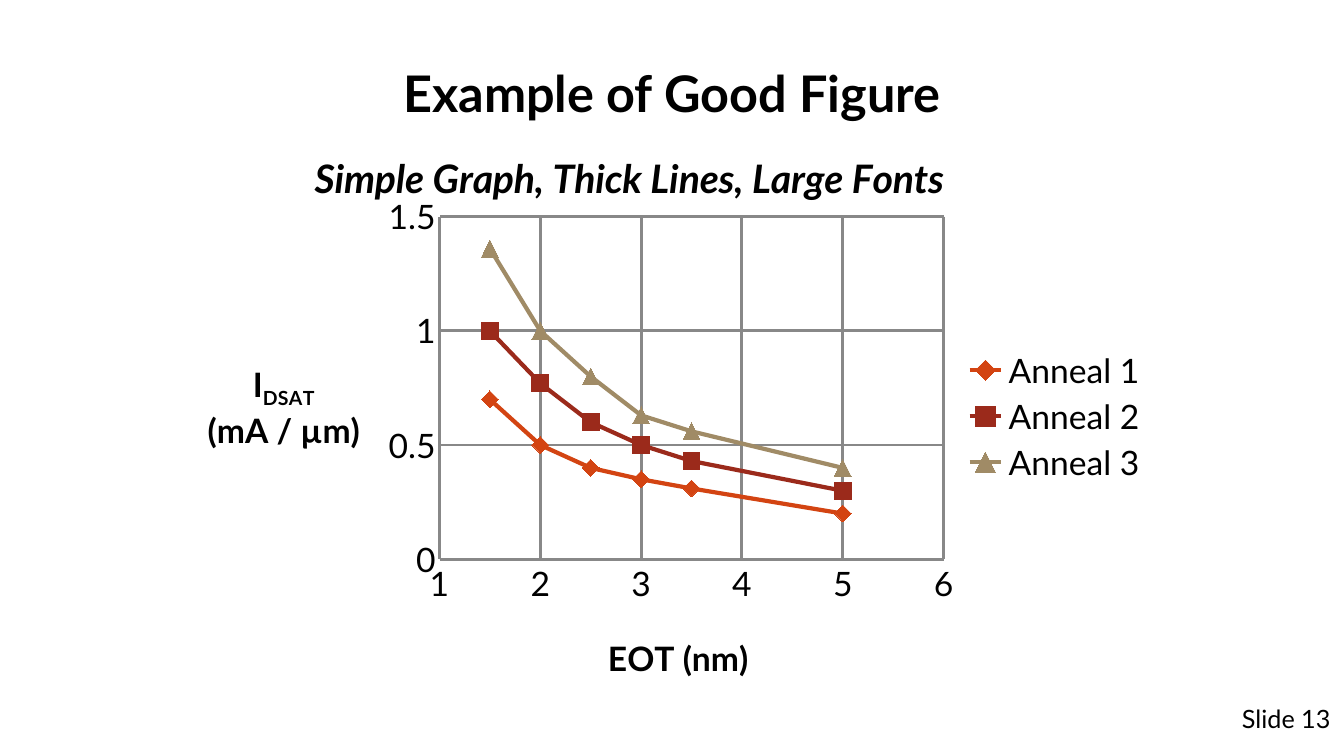
import dataclasses

import lxml.etree
import pptx
import pptx.chart.data
import pptx.dml.color
import pptx.enum.chart
import pptx.enum.text
import pptx.oxml.ns
import pptx.util

PX = 9144  # EMU: 100 px to the inch


@dataclasses.dataclass(frozen=True)
class Theme:
    font: str = "Lato"
    ink: str = "000000"
    paper: str = "FFFFFF"
    grid: str = "888888"
    series: tuple = ("D34412", "9B2A1B", "A08B66")
    title: int = 36
    chart_title: int = 28
    label: int = 24
    footer: int = 18
    grid_width: int = 2
    curve_width: int = 3
    marker_size: int = 12


THEME = Theme()
MARKER = pptx.enum.chart.XL_MARKER_STYLE
CENTER = pptx.enum.text.PP_ALIGN.CENTER

EOT = (1.5, 2, 2.5, 3, 3.5, 5)
ANNEALS = {
    "Anneal 1": (MARKER.DIAMOND, (0.7, 0.5, 0.4, 0.35, 0.31, 0.2)),
    "Anneal 2": (MARKER.SQUARE, (1, 0.77, 0.6, 0.5, 0.43, 0.3)),
    "Anneal 3": (MARKER.TRIANGLE, (1.36, 1, 0.8, 0.63, 0.56, 0.4)),
}


def rgb(color):
    return pptx.dml.color.RGBColor.from_string(color)


def emu(box):
    return [length * PX for length in box]


def style(font, size, bold=False, italic=False):
    font.name, font.size = THEME.font, pptx.util.Pt(size)
    font.bold, font.italic = bold, italic
    font.color.rgb = rgb(THEME.ink)


def write(para, text, align=None, **look):
    span = para.add_run()
    span.text = text
    style(span.font, **look)
    if align is not None:
        para.alignment = align


def stroke(line, color, width):
    line.color.rgb = rgb(color)
    line.width = pptx.util.Pt(width)


def place(part, box, area, inner=False):
    """Fix a chart part at a px box inside the chart area."""
    tag = pptx.oxml.ns.qn
    for old in part.findall(tag("c:layout")):
        part.remove(old)
    layout = lxml.etree.Element(tag("c:layout"))
    manual = lxml.etree.SubElement(layout, tag("c:manualLayout"))
    fields = [("layoutTarget", "inner")] if inner else []
    fields += [("xMode", "edge"), ("yMode", "edge")]
    spans = (area[2], area[3]) * 2
    fields += [(name, f"{length / span:.4f}") for name, length, span in zip("xywh", box, spans)]
    for name, value in fields:
        lxml.etree.SubElement(manual, tag("c:" + name)).set("val", value)
    leading = (tag("c:tx"), tag("c:legendPos"))
    part.insert(sum(child.tag in leading for child in part), layout)


def add_title(page, box):
    title = page.shapes.title
    title.left, title.top, title.width, title.height = emu(box)
    title.text_frame.vertical_anchor = pptx.enum.text.MSO_ANCHOR.MIDDLE
    write(title.text_frame.paragraphs[0], "Example of Good Figure", CENTER,
          size=THEME.title, bold=True)


def set_axis(axis, low, high, step):
    axis.minimum_scale, axis.maximum_scale, axis.major_unit = low, high, step
    axis.major_tick_mark = axis.minor_tick_mark = pptx.enum.chart.XL_TICK_MARK.NONE
    axis.has_major_gridlines = True
    stroke(axis.major_gridlines.format.line, THEME.grid, THEME.grid_width)
    stroke(axis.format.line, THEME.grid, 1)
    axis.tick_labels.number_format = "General"
    axis.tick_labels.number_format_is_linked = False
    style(axis.tick_labels.font, THEME.label)


def set_chart_titles(chart):
    write(chart.chart_title.text_frame.paragraphs[0], "Simple Graph, Thick Lines, Large Fonts",
          CENTER, size=THEME.chart_title, bold=True, italic=True)
    label = dict(align=CENTER, size=THEME.label, bold=True)
    write(chart.category_axis.axis_title.text_frame.paragraphs[0], "EOT (nm)", **label)
    frame = chart.value_axis.axis_title.text_frame
    write(frame.paragraphs[0], "I", **label)
    write(frame.paragraphs[0], "DSAT", **label)
    write(frame.add_paragraph(), "(mA / µm)", **label)
    value_title = chart.element.xpath(".//c:valAx[2]/c:title")[0]
    body = value_title.xpath(".//a:bodyPr")[0]
    body.set("rot", "0")
    body.set("vert", "horz")
    value_title.xpath(".//a:p[1]/a:r[2]/a:rPr")[0].set("baseline", "-25000")


def add_anneal_chart(page, box):
    data = pptx.chart.data.XyChartData()
    for name, (_, currents) in ANNEALS.items():
        series = data.add_series(name)
        for thickness, current in zip(EOT, currents):
            series.add_data_point(thickness, current)
    kind = pptx.enum.chart.XL_CHART_TYPE.XY_SCATTER_LINES
    chart = page.shapes.add_chart(kind, *emu(box), data).chart
    style(chart.font, THEME.label)
    chart.plots[0].vary_by_categories = False
    set_axis(chart.category_axis, 1, 6, 1)
    set_axis(chart.value_axis, 0, 1.5, 0.5)
    set_chart_titles(chart)

    chart.has_legend = True
    chart.legend.position = pptx.enum.chart.XL_LEGEND_POSITION.RIGHT
    chart.legend.include_in_layout = False
    style(chart.legend.font, THEME.label)

    for series, color, (marker, _) in zip(chart.plots[0].series, THEME.series, ANNEALS.values()):
        series.smooth = False
        stroke(series.format.line, color, THEME.curve_width)
        series.marker.style, series.marker.size = marker, THEME.marker_size
        series.marker.format.fill.solid()
        series.marker.format.fill.fore_color.rgb = rgb(color)
        stroke(series.marker.format.line, color, 1)

    parts = {
        "c:chart/c:title": (122, 14),
        ".//c:valAx[1]/c:title": (414, 495),
        ".//c:valAx[2]/c:title": (20, 228),
        ".//c:legend": (772, 214, 182, 142),
    }
    for query, spot in parts.items():
        place(chart.element.xpath(query)[0], spot, box)
    place(chart.element.xpath(".//c:plotArea")[0], (253, 87, 500, 340), box, inner=True)


def add_slide_number(page, box):
    frame = page.shapes.add_textbox(*emu(box)).text_frame
    frame.word_wrap = True
    frame.auto_size = pptx.enum.text.MSO_AUTO_SIZE.SHAPE_TO_FIT_TEXT
    write(frame.paragraphs[0], "Slide 13", size=THEME.footer)


def main():
    deck = pptx.Presentation()
    deck.slide_width, deck.slide_height = emu((1333, 750))
    page = deck.slides.add_slide(deck.slide_layouts[5])
    page.background.fill.solid()
    page.background.fill.fore_color.rgb = rgb(THEME.paper)
    add_title(page, (22, 58, 1289, 67))
    add_anneal_chart(page, (183, 128, 967, 558))
    add_slide_number(page, (1222, 693, 120, 40))
    deck.save("out.pptx")


if __name__ == "__main__":
    main()
